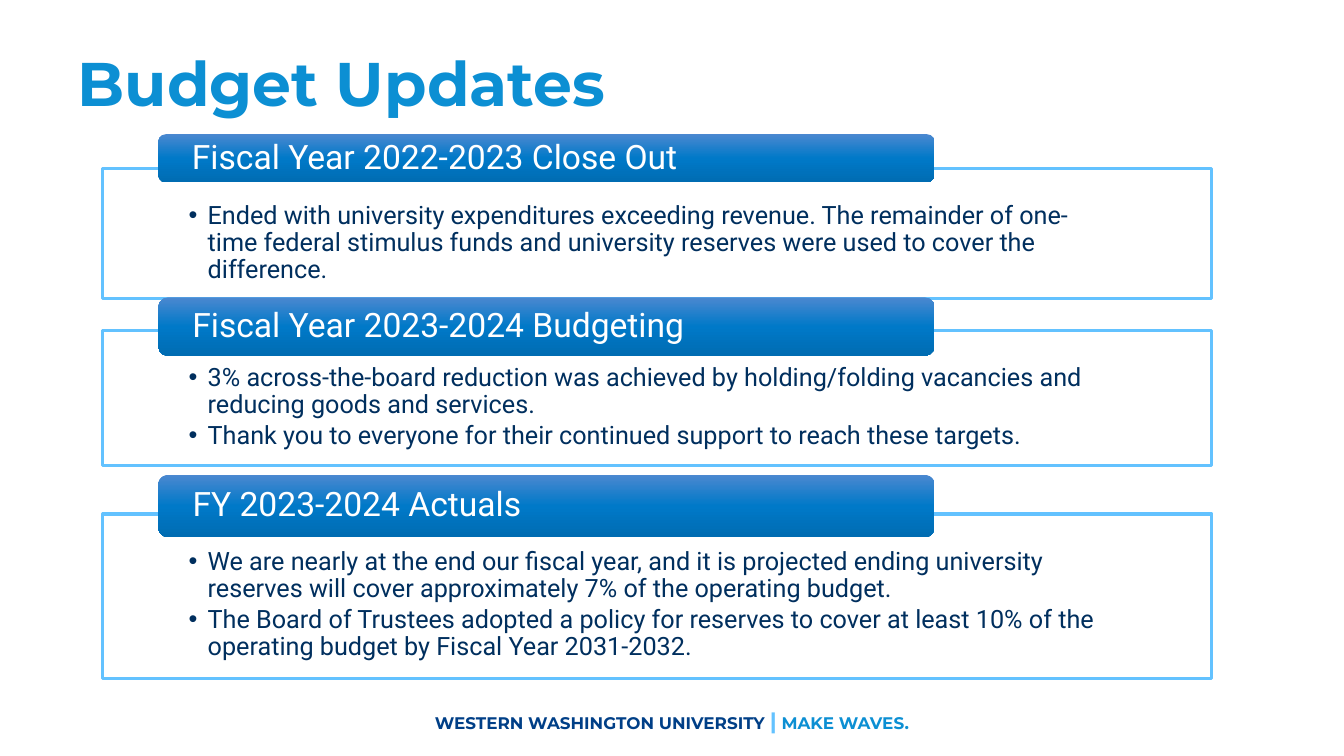
import copy

import pptx
import pptx.util
import pptx.dml.color
import pptx.enum.shapes
import pptx.enum.text
import pptx.oxml.ns
from lxml import etree

Inches, Pt = pptx.util.Inches, pptx.util.Pt
RGBColor = pptx.dml.color.RGBColor
MSO_SHAPE = pptx.enum.shapes.MSO_SHAPE
PP_ALIGN = pptx.enum.text.PP_ALIGN
MSO_ANCHOR = pptx.enum.text.MSO_ANCHOR
qn = pptx.oxml.ns.qn

WHITE = RGBColor(0xFF, 0xFF, 0xFF)
BRIGHT_BLUE = RGBColor(0x0C, 0x8F, 0xD3)
DEEP_BLUE = RGBColor(0x00, 0x3F, 0x87)
SKY = RGBColor(0x63, 0xC2, 0xFF)
NAVY = RGBColor(0x00, 0x2F, 0x5E)
HEADING_GRADIENT = [
    (0, RGBColor(0x4B, 0x88, 0xD0)),
    (0.5, RGBColor(0x00, 0x79, 0xC8)),
    (1, RGBColor(0x00, 0x6C, 0xB2)),
]

TITLE = "Budget Updates"
FOOTER = [
    ("WESTERN WASHINGTON UNIVERSITY ", 12, DEEP_BLUE),
    ("|", 16, SKY),
    (" ", 12, DEEP_BLUE),
    ("MAKE WAVES.", 12, BRIGHT_BLUE),
]
SECTIONS = [
    {
        "heading": "Fiscal Year 2022-2023 Close Out",
        "heading_span": (1.33, 0.48),
        "panel_span": (1.67, 1.29),
        "points": [
            "Ended with university expenditures exceeding revenue. The remainder of one-\v"
            "time federal stimulus funds and university reserves were used to cover the difference.",
        ],
    },
    {
        "heading": "Fiscal Year 2023-2024 Budgeting",
        "heading_span": (2.95, 0.58),
        "panel_span": (3.28, 1.34),
        "points": [
            "3% across-the-board reduction was achieved by holding/folding vacancies and "
            "reducing goods and services.",
            "Thank you to everyone for their continued support to reach these targets.",
        ],
    },
    {
        "heading": "FY 2023-2024 Actuals",
        "heading_span": (4.71, 0.62),
        "panel_span": (5.1, 1.63),
        "points": [
            "We are nearly at the end our fiscal year, and it is projected ending university "
            "reserves will cover approximately 7% of the operating budget.",
            "The Board of Trustees adopted a policy for reserves to cover at least 10% of the "
            "operating budget by Fiscal Year 2031-2032.",
        ],
    },
]
PANEL_LEFT, PANEL_WIDTH = 1.02, 11
HEADING_LEFT, HEADING_WIDTH = 1.57, 7.7


def style(font, face, size, color, bold=False):
    font.name, font.size, font.bold = face, Pt(size), bold
    font.color.rgb = color


def add_block(slide, kind, left, span, width, insets, anchor):
    top, height = span
    block = slide.shapes.add_shape(
        kind, Inches(left), Inches(top), Inches(width), Inches(height))
    block.shadow.inherit = False
    frame = block.text_frame
    frame.word_wrap = True
    frame.vertical_anchor = anchor
    side, frame_top, frame_bottom = insets
    frame.margin_left = frame.margin_right = Inches(side)
    frame.margin_top, frame.margin_bottom = Inches(frame_top), Inches(frame_bottom)
    return block


def add_panel(slide, section):
    panel = add_block(slide, MSO_SHAPE.RECTANGLE, PANEL_LEFT, section["panel_span"],
                      PANEL_WIDTH, (0.85, 0.34, 0.14), MSO_ANCHOR.TOP)
    panel.fill.solid()
    panel.fill.fore_color.rgb = WHITE
    panel.line.color.rgb = SKY
    panel.line.width = Pt(2.25)
    panel.text_frame.text = "\n".join(section["points"])
    for point in panel.text_frame.paragraphs:
        properties = point._p.get_or_add_pPr()
        properties.set("marL", str(Inches(0.19)))
        properties.set("indent", str(-Inches(0.19)))
        etree.SubElement(properties, qn("a:buFont"), typeface="Arial")
        etree.SubElement(properties, qn("a:buChar"), char="•")
        point.alignment = PP_ALIGN.LEFT
        point.line_spacing = 0.9
        point.space_after = Pt(2.7)
        for run in point.runs:
            style(run.font, "Roboto", 18, NAVY)


def add_heading(slide, section):
    heading = add_block(slide, MSO_SHAPE.ROUNDED_RECTANGLE, HEADING_LEFT,
                        section["heading_span"], HEADING_WIDTH, (0.31, 0, 0),
                        MSO_ANCHOR.MIDDLE)
    heading.line.fill.background()
    heading.fill.gradient()
    heading.fill.gradient_angle = 270
    stop_list = heading._element.spPr.find(qn("a:gradFill")).find(qn("a:gsLst"))
    stop_list.append(copy.deepcopy(stop_list[-1]))
    for stop, (position, color) in zip(heading.fill.gradient_stops, HEADING_GRADIENT):
        stop.position = position
        stop.color.rgb = color
    heading.text_frame.text = section["heading"]
    line = heading.text_frame.paragraphs[0]
    line.alignment = PP_ALIGN.LEFT
    line.line_spacing = 0.9
    style(line.runs[0].font, "Roboto", 24, WHITE)


def add_title(slide):
    title = slide.shapes.title
    title.left, title.top = Inches(0.67), Inches(0.13)
    title.width, title.height = Inches(11.5), Inches(1.45)
    title.text_frame.text = TITLE
    title.text_frame.vertical_anchor = MSO_ANCHOR.MIDDLE
    line = title.text_frame.paragraphs[0]
    line.alignment = PP_ALIGN.LEFT
    line.line_spacing = 0.9
    style(line.runs[0].font, "Montserrat", 44, BRIGHT_BLUE, True)


def add_footer(slide):
    footer = slide.shapes.add_textbox(0, Inches(6.95), Inches(13.33), Inches(0.4))
    footer.text_frame.word_wrap = True
    footer.text_frame.vertical_anchor = MSO_ANCHOR.MIDDLE
    line = footer.text_frame.paragraphs[0]
    line.alignment = PP_ALIGN.CENTER
    for words, size, color in FOOTER:
        run = line.add_run()
        run.text = words
        style(run.font, "Montserrat", size, color, True)


def main():
    deck = pptx.Presentation()
    deck.slide_width, deck.slide_height = Inches(13.33), Inches(7.5)
    slide = deck.slides.add_slide(deck.slide_layouts.get_by_name("Title Only"))
    add_title(slide)
    add_footer(slide)
    for section in SECTIONS:
        add_panel(slide, section)
        add_heading(slide, section)
    deck.save("out.pptx")


if __name__ == "__main__":
    main()
